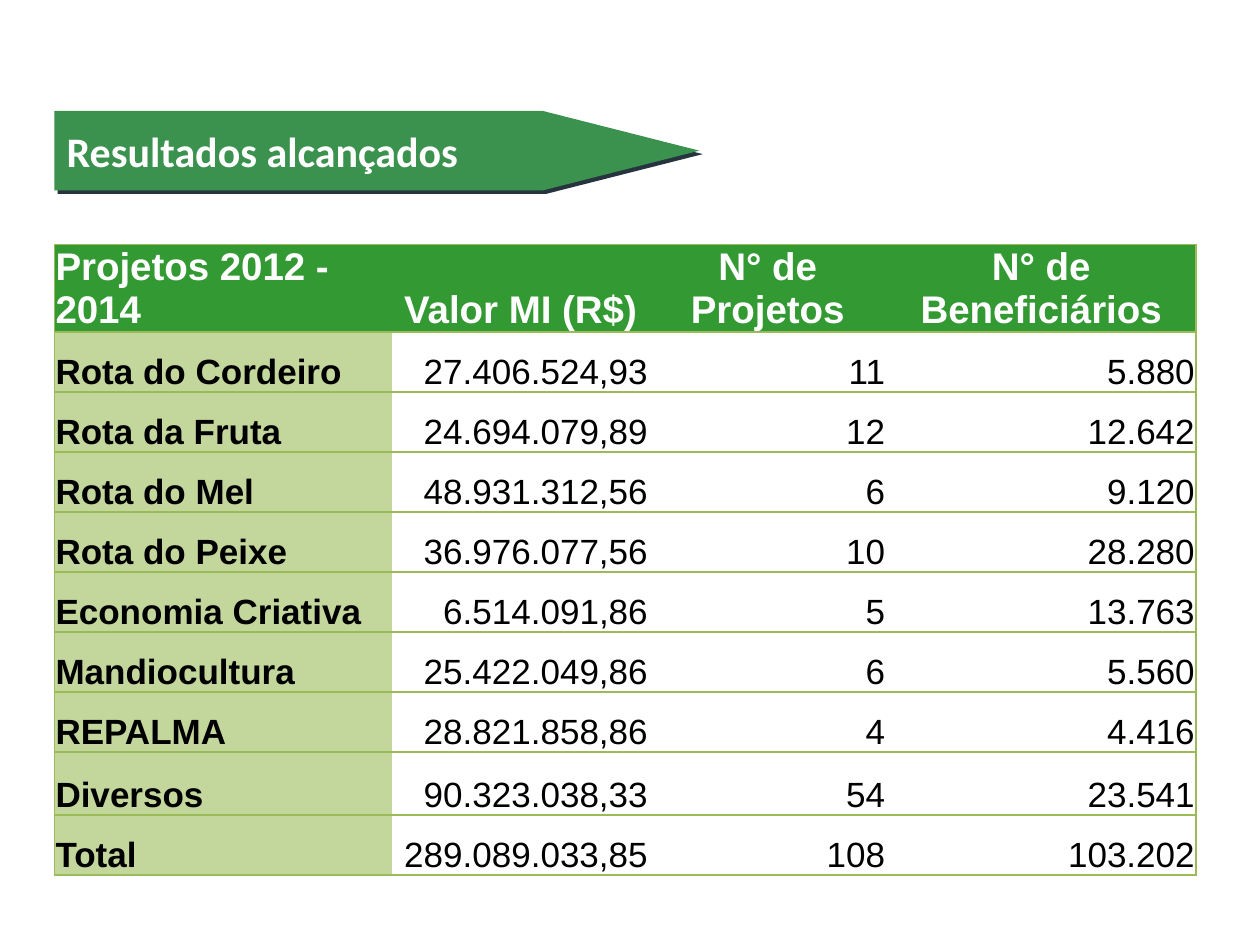
from dataclasses import dataclass

from lxml import etree
from pptx import Presentation
from pptx import util as u
from pptx.dml import color
from pptx.enum import shapes, text
from pptx.oxml import ns

GREEN_LINE = "9BBB59"
COLUMN_WIDTHS = (193, 147, 135.5, 177)
ROW_HEIGHTS = (36, *[34.3] * 7, 36, 34.3)
HEADINGS = ("Projetos 2012 - 2014", "Valor MI (R$)", "N° de Projetos", "N° de Beneficiários")


@dataclass(frozen=True)
class CellStyle:
    fill: str
    font: dict
    alignment: text.PP_ALIGN


@dataclass(frozen=True)
class Project:
    name: str
    value: str
    projects: str
    beneficiaries: str


PROJECTS = (
    Project("Rota do Cordeiro", "27.406.524,93", "11", "5.880"),
    Project("Rota da Fruta", "24.694.079,89", "12", "12.642"),
    Project("Rota do Mel", "48.931.312,56", "6", "9.120"),
    Project("Rota do Peixe", "36.976.077,56", "10", "28.280"),
    Project("Economia Criativa", "6.514.091,86", "5", "13.763"),
    Project("Mandiocultura", "25.422.049,86", "6", "5.560"),
    Project("REPALMA", "28.821.858,86", "4", "4.416"),
    Project("Diversos", "90.323.038,33", "54", "23.541"),
    Project("Total", "289.089.033,85", "108", "103.202"),
)

HEADER_FONT = {"name": "Arial", "size": u.Pt(22), "bold": True}
NAME_FONT = HEADER_FONT | {"size": u.Pt(20)}
NUMBER_FONT = NAME_FONT | {"bold": False}
TITLE_FONT = {"name": "Calibri", "size": u.Pt(24), "bold": True}


def rgb(value: str) -> color.RGBColor:
    return color.RGBColor.from_string(value)


def assign(target, values: dict) -> None:
    for name, value in values.items():
        setattr(target, name, value)


def add_element(parent, tag: str, **attributes: str):
    return etree.SubElement(parent, ns.qn(tag), attributes)


def write(paragraph, wording: str, font: dict, ink: str, alignment) -> None:
    paragraph.alignment = alignment
    span = paragraph.add_run()
    span.text = wording
    assign(span.font, font)
    span.font.color.rgb = rgb(ink)


def set_border(cell, side: str, visible: bool) -> None:
    properties = cell._tc.get_or_add_tcPr()
    border = add_element(properties, f"a:ln{side}", w=str(u.Pt(1)))
    if visible:
        fill = add_element(border, "a:solidFill")
        add_element(fill, "a:srgbClr", val=GREEN_LINE)
    else:
        add_element(border, "a:noFill")


def cell_style(row: int, column: int) -> CellStyle:
    if row == 0:
        alignment = text.PP_ALIGN.CENTER if column else text.PP_ALIGN.LEFT
        return CellStyle("339933", HEADER_FONT, alignment)
    if column == 0:
        return CellStyle("C3D69B", NAME_FONT, text.PP_ALIGN.LEFT)
    return CellStyle("FFFFFF", NUMBER_FONT, text.PP_ALIGN.RIGHT)


def draw_cell(cell, wording: str, row: int, column: int) -> None:
    style = cell_style(row, column)
    assign(cell, {
        "margin_left": u.Pt(0.72), "margin_right": u.Pt(0.72),
        "margin_top": u.Pt(0.72), "margin_bottom": u.Pt(0),
        "vertical_anchor": text.MSO_ANCHOR.BOTTOM,
    })
    last = len(COLUMN_WIDTHS) - 1
    borders = {"L": column == 0, "R": column == last, "T": True, "B": True}
    for side, visible in borders.items():
        set_border(cell, side, visible)
    cell.fill.solid()
    cell.fill.fore_color.rgb = rgb(style.fill)
    ink = "000000" if row else "FFFFFF"
    write(cell.text_frame.paragraphs[0], wording, style.font, ink, style.alignment)


def draw_banner(page) -> None:
    banner = page.shapes.add_shape(
        shapes.MSO_SHAPE.PENTAGON, u.Pt(31), u.Pt(63.4), u.Pt(368.6), u.Pt(45.4))
    banner.adjustments[0] = 1.97
    banner.fill.solid()
    banner.fill.fore_color.rgb = rgb("3B924E")
    banner.line.fill.background()
    banner.shadow.inherit = False
    effects = banner._element.spPr.find(ns.qn("a:effectLst"))
    shadow = add_element(effects, "a:outerShdw", blurRad="0", dist=str(u.Pt(2.8)),
                         dir=str(45 * 60000), algn="ctr", rotWithShape="0")
    add_element(shadow, "a:srgbClr", val="27343F")
    frame = banner.text_frame
    assign(frame, {"word_wrap": False, "vertical_anchor": text.MSO_ANCHOR.MIDDLE})
    write(frame.paragraphs[0], "Resultados alcançados", TITLE_FONT, "FFFFFF",
          text.PP_ALIGN.LEFT)


def draw_results(page) -> None:
    rows = [HEADINGS] + [
        (item.name, item.value, item.projects, item.beneficiaries) for item in PROJECTS]
    table = page.shapes.add_table(
        len(rows), len(COLUMN_WIDTHS), u.Pt(31), u.Pt(139.7),
        u.Pt(sum(COLUMN_WIDTHS)), u.Pt(sum(ROW_HEIGHTS))).table
    table.horz_banding = False
    for column, width in zip(table.columns, COLUMN_WIDTHS):
        column.width = u.Pt(width)
    for row, height in zip(table.rows, ROW_HEIGHTS):
        row.height = u.Pt(height)
    for row, wordings in enumerate(rows):
        for column, wording in enumerate(wordings):
            draw_cell(table.cell(row, column), wording, row, column)


def main() -> None:
    deck = Presentation()
    assign(deck, {"slide_width": u.Pt(720), "slide_height": u.Pt(540)})
    page = deck.slides.add_slide(deck.slide_layouts[6])
    draw_banner(page)
    draw_results(page)
    deck.save("out.pptx")


if __name__ == "__main__":
    main()
